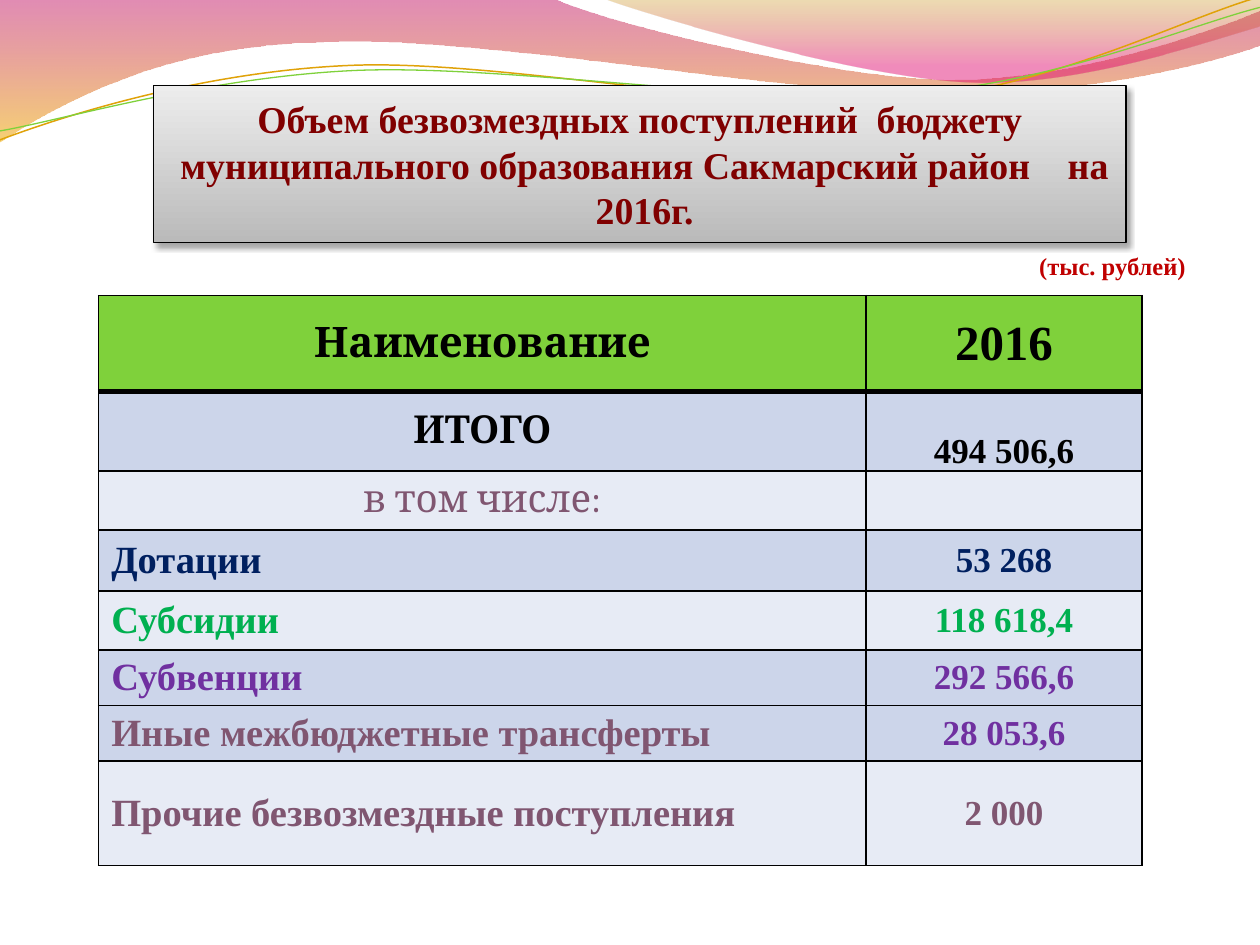
from lxml import etree
from pptx import Presentation
from pptx.dml.color import RGBColor
from pptx.enum.text import MSO_ANCHOR, PP_ALIGN
from pptx.oxml.ns import qn
from pptx.util import Cm, Pt

LEFT, CENTER = PP_ALIGN.LEFT, PP_ALIGN.CENTER
MIDDLE, BOTTOM = MSO_ANCHOR.MIDDLE, MSO_ANCHOR.BOTTOM
SERIF, HEADING = "Times New Roman", "Cambria"
BLACK, MAUVE, VIOLET = "000000", "805671", "7030A0"
GREEN, BLUE, PALE = "7FD13B", "CCD5EA", "E7EBF5"

# Content
TITLE = ("Объем безвозмездных поступлений  бюджету\v"
         " муниципального образования Сакмарский район    на  2016г.")
UNITS = "(тыс. рублей)"

# Row: height in cm, fill, then (text, size, font, colour, bold, alignment) per cell
ROWS = [
    (1.93, GREEN, ("Наименование", 24, HEADING, BLACK, True, CENTER),
     ("2016", 28, SERIF, BLACK, True, CENTER)),
    (1.6, BLUE, ("ИТОГО", 22, HEADING, BLACK, True, CENTER),
     ("494 506,6", 20, SERIF, BLACK, True, CENTER)),
    (1.19, PALE, ("в том числе:", 22, HEADING, MAUVE, False, CENTER), None),
]
ITEMS = [  # height, fill, name, name colour, value, value colour
    (1.23, BLUE, "Дотации", "002060", "53 268", "002060"),
    (1.19, PALE, "Субсидии", "00B050", "118 618,4", "00B050"),
    (1.12, BLUE, "Субвенции", VIOLET, "292 566,6", VIOLET),
    (1.12, BLUE, "Иные межбюджетные трансферты", MAUVE, "28 053,6", VIOLET),
    (2.11, PALE, "Прочие безвозмездные поступления", MAUVE, "2 000", MAUVE),
]
ROWS += [(height, fill, (name, 22, SERIF, name_color, True, LEFT),
          (value, 20, SERIF, value_color, True, CENTER))
         for height, fill, name, name_color, value, value_color in ITEMS]
COLUMNS = [15.47, 5.56]
TOTAL_ROW = 1

# Wave outlines in cm: a pair is a line, six numbers are a Bezier curve
BANDS = [  # gradient stops (position, colour, opacity %), outline
    ([(0, "BD0059", 45), (1, "F0AB00", 55)],
     [(0, -0.02), (11.18, -0.02), (12.09, 0.43, 16.87, 1.6, 19.25, 1.6),
      (21.67, 1.6, 24.33, 0.66, 25.4, 0.23), (25.42, 0.91),
      (24.97, 1.12, 22.1, 1.93, 18.95, 1.9), (15.8, 1.9, 9.7, 0.71, 6.53, 0.86),
      (3.28, 0.89, 1.17, 2.11, -0.02, 2.87)]),
    ([(0, "C38B00", 30), (0.8, "E1006B", 45)],
     [(12.17, -0.02), (12.93, 0.28, 17.32, 1.57, 19.53, 1.65),
      (21.74, 1.75, 24.41, 0.81, 25.4, 0.53), (25.4, 0)]),
]
STRANDS = [  # colour, width in points, outline
    ("E0A209", 0.85,
     [(0, 2.82), (1.22, 2.36, 4.01, 1.45, 7.04, 1.32),
      (10.03, 1.19, 15.06, 2.26, 18.11, 2.03), (21.16, 1.8, 23.83, 0.38, 25.35, -0.05)]),
    (GREEN, 0.75,
     [(0, 2.64), (1.19, 2.44, 4.17, 1.55, 7.19, 1.42),
      (10.24, 1.3, 15.16, 2.11, 18.21, 1.9), (21.23, 1.7, 23.9, 0.53, 25.4, 0.15)]),
]


def rgb(color):
    return RGBColor.from_string(color)


def add_node(parent, tag, **attributes):
    return etree.SubElement(parent, qn(tag), attributes)


def style_text(frame, size, font, color, bold, align):
    for para in frame.paragraphs:
        para.alignment = align
        for span in para.runs:
            span.font.size, span.font.name = Pt(size), font
            span.font.bold = bold
            span.font.color.rgb = rgb(color)


def add_outline(page, outline, close):
    start, *ends = [(Cm(segment[-2]), Cm(segment[-1])) for segment in outline]
    builder = page.shapes.build_freeform(*start)
    builder.add_line_segments(ends, close=close)
    shape = builder.convert_to_shape()
    shape.shadow.inherit = False
    # Bend the straight segments that have control points
    lines = list(shape.element.spPr.iter(qn("a:lnTo")))
    for line, segment in zip(lines, outline[1:]):
        if len(segment) == 6:
            line.tag = qn("a:cubicBezTo")
            for index, (x, y) in enumerate((segment[:2], segment[2:4])):
                point = etree.Element(qn("a:pt"), x=str(Cm(x) - shape.left),
                                      y=str(Cm(y) - shape.top))
                line.insert(index, point)
    return shape


def fill_gradient(shape, stops):
    shape.fill.gradient()
    shape.fill.gradient_angle = 270
    for stop, (position, color, _) in zip(shape.fill.gradient_stops, stops):
        stop.position = position
        stop.color.rgb = rgb(color)
    nodes = shape.element.spPr.iter(qn("a:srgbClr"))
    for node, (_, _, opacity) in zip(nodes, stops):
        add_node(node, "a:alpha", val=str(opacity * 1000))


def set_borders(cell, top, bottom):
    properties = cell._tc.get_or_add_tcPr()
    for side, width in (("L", 1), ("R", 1), ("T", top), ("B", bottom)):
        line = add_node(properties, f"a:ln{side}", w=str(Pt(width)))
        add_node(add_node(line, "a:solidFill"), "a:srgbClr", val=BLACK)


deck = Presentation()
deck.slide_width, deck.slide_height = Cm(25.4), Cm(19.05)
page = deck.slides.add_slide(deck.slide_layouts[5])

# Waves along the top
for stops, outline in BANDS:
    band = add_outline(page, outline, close=True)
    fill_gradient(band, stops)
    band.line.fill.background()
for color, width, outline in STRANDS:
    strand = add_outline(page, outline, close=False)
    strand.fill.background()
    strand.line.color.rgb = rgb(color)
    strand.line.width = Pt(width)

# Table
table = page.shapes.add_table(len(ROWS), len(COLUMNS), Cm(1.99), Cm(5.96), Cm(sum(COLUMNS)),
                              Cm(sum(row[0] for row in ROWS))).table
for column, width in zip(table.columns, COLUMNS):
    column.width = Cm(width)
for index, (height, fill, *cells) in enumerate(ROWS):
    table.rows[index].height = Cm(height)
    for cell, content in zip(table.rows[index].cells, cells):
        set_borders(cell, 3 if index == 1 else 1, 3 if index == 0 else 1)
        cell.fill.solid()
        cell.fill.fore_color.rgb = rgb(fill)
        cell.vertical_anchor = MIDDLE
        if content:
            cell.text_frame.text = content[0]
            style_text(cell.text_frame, *content[1:])
total = table.cell(TOTAL_ROW, 1)
total.vertical_anchor = BOTTOM
total.margin_left = total.margin_right = total.margin_top = Cm(0.03)
total.margin_bottom = 0

# Title plate, brought in front of the waves
title = page.shapes.title
title.element.getparent().append(title.element)
title.left, title.top, title.width, title.height = Cm(3.1), Cm(1.72), Cm(19.6), Cm(3.17)
fill_gradient(title, [(0, "EDEDED", 100), (1, "BABABA", 100)])
title.line.color.rgb = rgb(BLACK)
title.line.width = Pt(0.75)
title.shadow.inherit = False
shadow = add_node(title.element.spPr.find(qn("a:effectLst")), "a:outerShdw",
                  blurRad=str(Pt(3)), dist=str(Pt(3)), dir="3600000")
add_node(add_node(shadow, "a:srgbClr", val=BLACK), "a:alpha", val="35000")
title.text_frame.text = TITLE
title.text_frame.word_wrap = True
title.text_frame.vertical_anchor = MIDDLE
style_text(title.text_frame, 21.6, SERIF, "800000", True, CENTER)

# Units note
box = page.shapes.add_textbox(Cm(20.7), Cm(4.93), Cm(3.61), Cm(0.84))
box.text_frame.word_wrap = True
box.text_frame.text = UNITS
style_text(box.text_frame, 14, SERIF, "C00000", True, LEFT)

deck.save("out.pptx")
